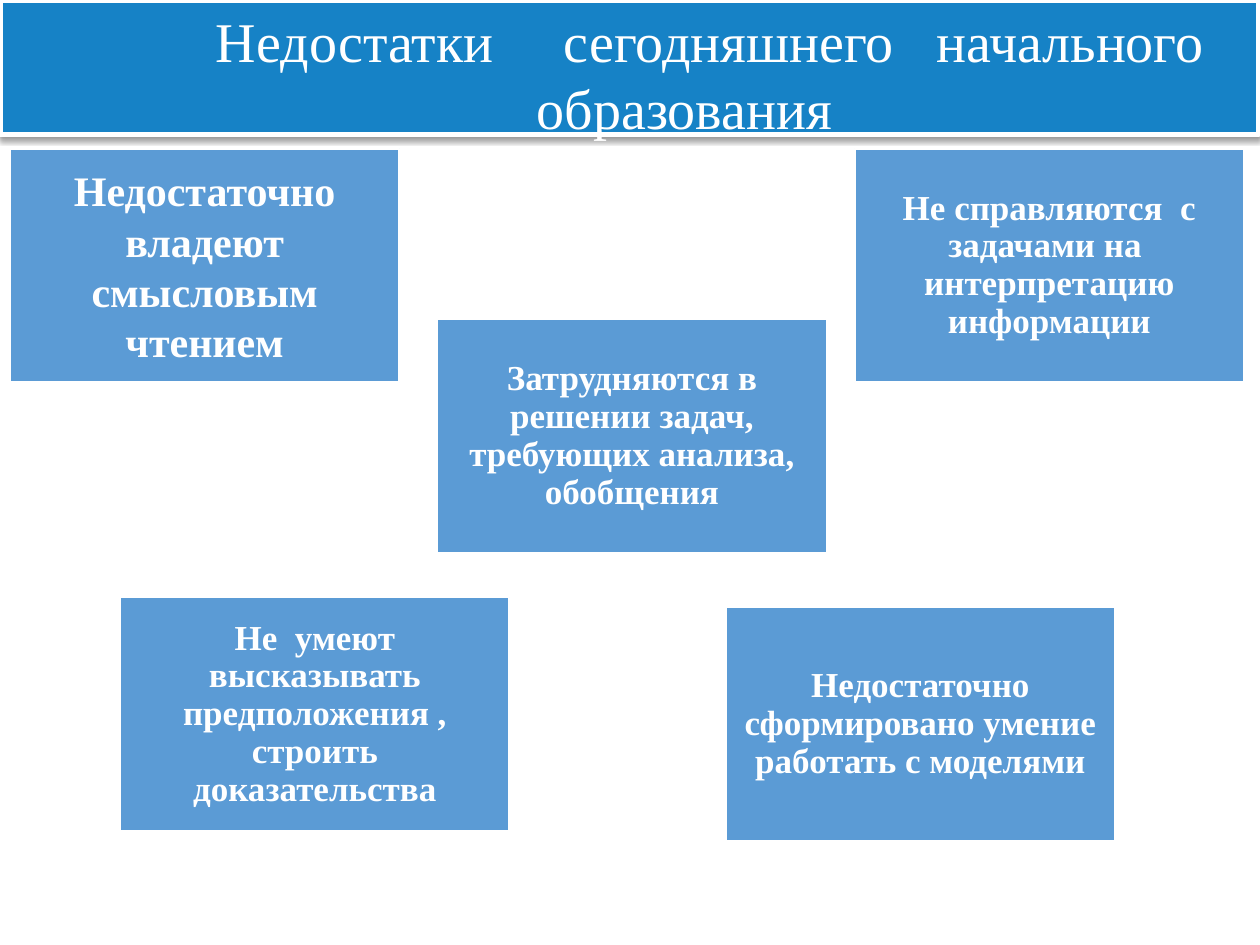
import pptx
import pptx.util
import pptx.dml.color
import pptx.enum.shapes
import pptx.enum.text
import pptx.oxml

Pt = pptx.util.Pt
RGB = pptx.dml.color.RGBColor.from_string
RECT = pptx.enum.shapes.MSO_SHAPE.RECTANGLE
MID = pptx.enum.text.MSO_ANCHOR.MIDDLE
CENTER = pptx.enum.text.PP_ALIGN.CENTER
FONT = "Times New Roman"
COLORS = {"bar": "1682C6", "card": "5B9BD5", "white": "FFFFFF"}
SHADOW = (
    '<a:effectLst xmlns:a="http://schemas.openxmlformats.org/drawingml/2006/main">'
    '<a:outerShdw blurRad="38100" dist="20320" dir="5400000" rotWithShape="0">'
    '<a:srgbClr val="000000"><a:alpha val="38000"/></a:srgbClr>'
    '</a:outerShdw></a:effectLst>'
)

deck = pptx.Presentation()
deck.slide_width, deck.slide_height = Pt(720), Pt(540)
slide = deck.slides.add_slide(deck.slide_layouts[6])


def add_rect(left, top, width, height, fill, line):
    rect = slide.shapes.add_shape(RECT, Pt(left), Pt(top), Pt(width), Pt(height))
    rect.shadow.inherit = False
    rect.fill.solid()
    rect.fill.fore_color.rgb = RGB(COLORS[fill])
    rect.line.color.rgb = RGB(COLORS["white"])
    rect.line.width = Pt(line)
    return rect


def style(font, size, bold):
    font.name, font.size, font.bold = FONT, Pt(size), bold
    font.color.rgb = RGB(COLORS["white"])


# Title bar with a soft shadow below
bar = add_rect(0, 0, 719.3, 77, "bar", 3)
props = bar.fill._xPr
props.remove(props.find(pptx.oxml.ns.qn("a:effectLst")))
props.append(pptx.oxml.parse_xml(SHADOW))

# Title: first line indented, wide gaps set by letter spacing
title = slide.shapes.add_textbox(Pt(14.4), Pt(0), Pt(753.8), Pt(85))
title.text_frame.word_wrap = True
para = title.text_frame.paragraphs[0]
para.alignment = CENTER
para._p.get_or_add_pPr().set("indent", str(Pt(28.8)))
pieces = [("Недостатки", 0), (" ", 32), ("сегодняшнего", 0), (" ", 16),
          ("начального образования", 0)]
for text, gap in pieces:
    run = para.add_run()
    run.text = text
    style(run.font, 32, False)
    if gap:
        run._r.get_or_add_rPr().set("spc", str(gap * 100))

# Cards: left, top, text size, line spacing, inset, text
cards = [
    (5.8, 85, 24, 1, 7.2, "Недостаточно владеют смысловым чтением"),
    (250, 182.5, 20, 0.9, 6, "Затрудняются в решении задач, требующих анализа, обобщения"),
    (488.5, 85, 20, 0.9, 6, "Не справляются  с задачами на  интерпретацию информации"),
    (68.8, 341.5, 20, 0.9, 6, "Не  умеют высказывать предположения , строить доказательства"),
    (414.8, 347.2, 20, 0.9, 6, "Недостаточно сформировано умение работать с моделями"),
]
for left, top, size, space, inset, text in cards:
    frame = add_rect(left, top, 222.3, 133.4, "card", 1).text_frame
    frame.word_wrap = True
    frame.vertical_anchor = MID
    frame.margin_left = frame.margin_right = Pt(inset)
    frame.margin_top = frame.margin_bottom = Pt(inset)
    frame.text = text
    para = frame.paragraphs[0]
    para.alignment = CENTER
    para.line_spacing = space
    para.space_after = Pt(size * 0.35)
    style(para.runs[0].font, size, True)

deck.save("out.pptx")
